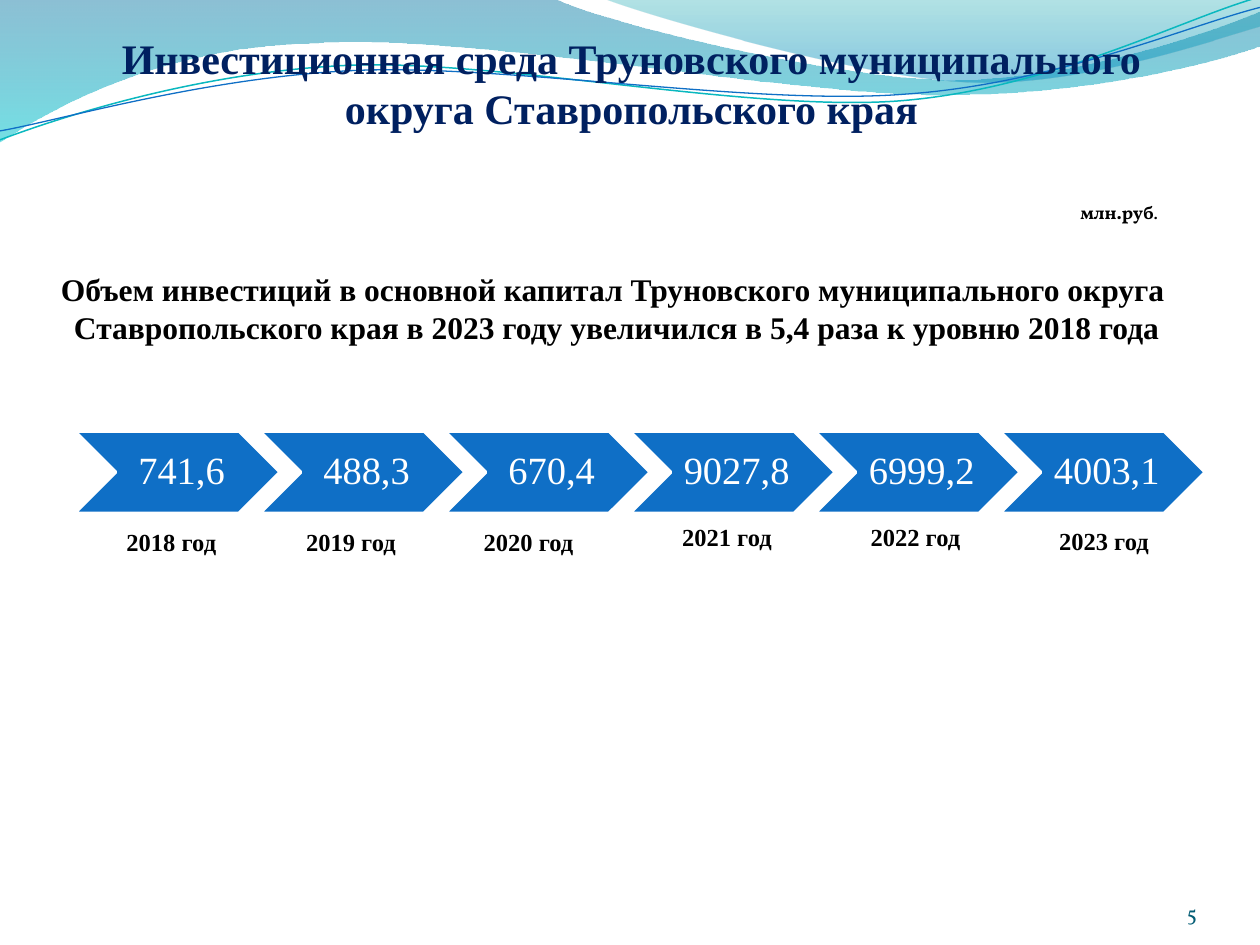
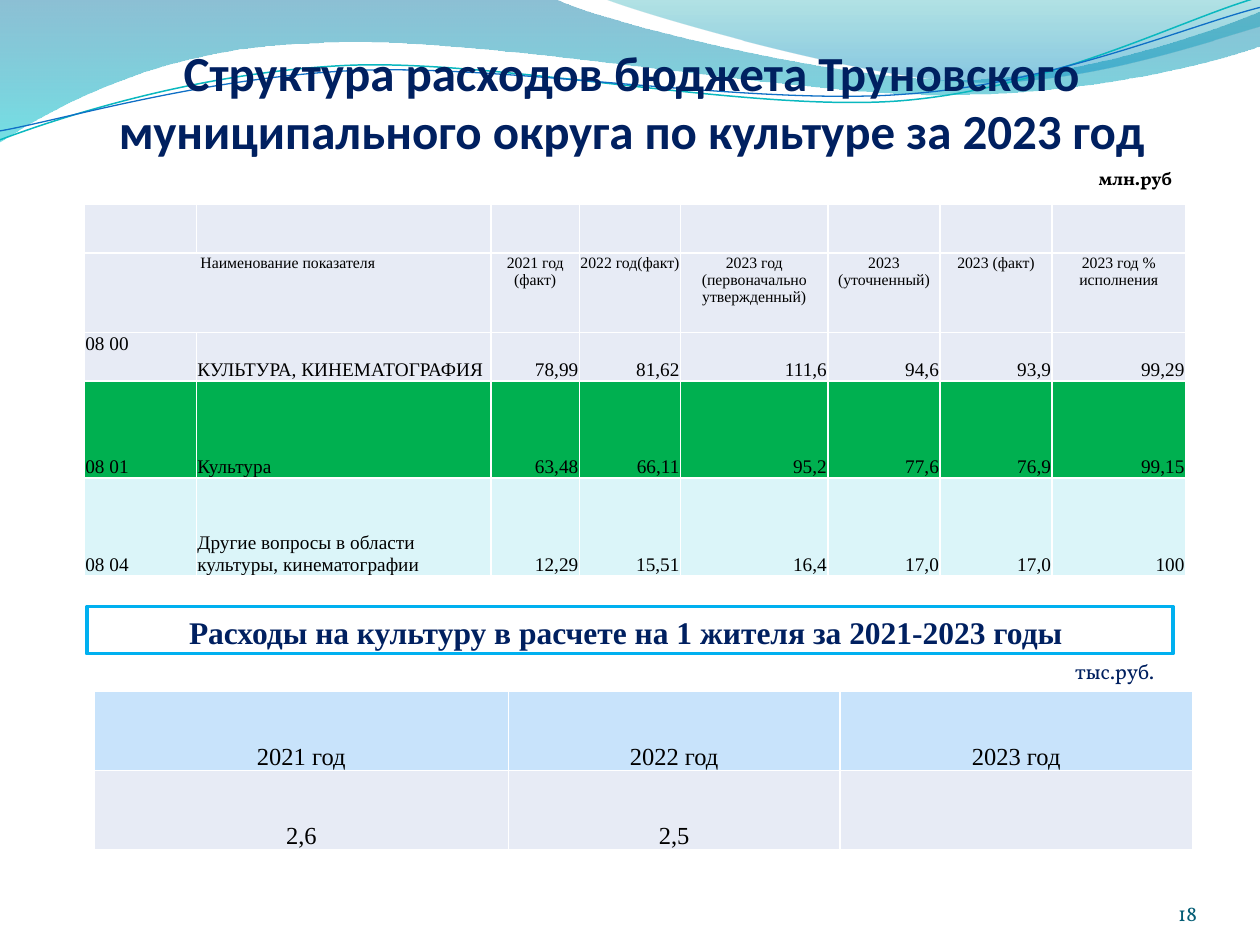
from lxml.etree import SubElement
from pptx import Presentation
from pptx.dml.color import RGBColor
from pptx.enum.shapes import MSO_SHAPE
from pptx.enum.text import MSO_ANCHOR, PP_ALIGN
from pptx.oxml.ns import qn
from pptx.util import Cm, Pt

WHITE = RGBColor(0xFF, 0xFF, 0xFF)
BLACK = RGBColor(0, 0, 0)
NAVY = RGBColor(0x00, 0x20, 0x60)
BLUE = RGBColor(0x0F, 0x6F, 0xC6)
SKY = RGBColor(0x00, 0xB0, 0xF0)
TEAL_LINE = RGBColor(0x0A, 0xB8, 0xBF)
PAGE_TEAL = RGBColor(0x04, 0x5D, 0x75)
GREY = RGBColor(0xE7, 0xEB, 0xF5)
GREEN = RGBColor(0x00, 0xB0, 0x50)
PALE_TEAL = RGBColor(0xDB, 0xF5, 0xF9)
PALE_BLUE = RGBColor(0xC8, 0xE3, 0xFB)

SERIF, SANS, VOLLKORN = "Times New Roman", "Calibri", "Vollkorn"
LEFT, CENTER, RIGHT = PP_ALIGN.LEFT, PP_ALIGN.CENTER, PP_ALIGN.RIGHT
INSETS = (0.25, 0.13, 0.25, 0.13)
CELL_INSETS = (0.02, 0.02, 0.02, 0)

# Wave outlines in cm: a pair is a corner, six numbers are a Bézier curve
BIG_WAVE = [(0, 0), (11.18, -0.03), (12.09, 0.43, 16.87, 1.6, 19.25, 1.6),
            (21.67, 1.6, 24.33, 0.66, 25.4, 0.23), (25.43, 0.91),
            (24.97, 1.12, 22.1, 1.93, 18.95, 1.91),
            (15.8, 1.91, 9.7, 0.71, 6.53, 0.86),
            (3.28, 0.91, 1.17, 2.11, -0.03, 2.87)]
RIGHT_WAVE = [(12.17, -0.03), (12.93, 0.28, 17.32, 1.57, 19.53, 1.65),
              (21.74, 1.75, 24.41, 0.81, 25.4, 0.53), (25.4, 0)]
# The two thin curves are given before their rotation
CURVE_ROTATION = 357.3
TEAL_CURVE = [(-0.05, 2.22), (1.19, 1.82, 4.02, 1.04, 7.05, 1.05),
              (10.05, 1.07, 15.02, 2.37, 18.08, 2.29),
              (21.13, 2.2, 23.86, 0.91, 25.41, 0.55)]
BLUE_CURVE = [(-0.04, 2.04), (1.16, 1.89, 4.17, 1.15, 7.2, 1.16),
              (10.25, 1.18, 15.13, 2.25, 18.19, 2.16),
              (21.22, 2.1, 23.93, 1.06, 25.45, 0.75)]
# Gradient stops: position, colour, opacity in percent
BIG_STOPS = [(0, RGBColor(0x00, 0x74, 0xA1), 45), (1, RGBColor(0x00, 0xC6, 0xCF), 55)]
RIGHT_STOPS = [(0, RGBColor(0x00, 0xA1, 0xA9), 30), (0.8, RGBColor(0x00, 0x8B, 0xBF), 45)]


def box(x, y, w, h):
    return Cm(x), Cm(y), Cm(w), Cm(h)


def fill_text(tf, lines, size, color, font=SERIF, bold=False, align=CENTER,
              anchor=MSO_ANCHOR.TOP, insets=INSETS, wrap=True):
    tf.word_wrap = wrap
    tf.vertical_anchor = anchor
    tf.margin_left, tf.margin_top, tf.margin_right, tf.margin_bottom = map(Cm, insets)
    for i, line in enumerate(lines):
        p = tf.add_paragraph() if i else tf.paragraphs[0]
        p.add_run().text = line
        style(p, size, color, font, bold, align)


def style(p, size, color, font=SERIF, bold=False, align=CENTER):
    p.alignment = align
    p.font.size, p.font.name, p.font.bold = Pt(size), font, bold
    p.font.color.rgb = color


def add_text(s, place, lines, size, color, **options):
    tf = s.shapes.add_textbox(*box(*place)).text_frame
    fill_text(tf, lines, size, color, **options)
    return tf


def add_outline(s, outline, close):
    points = [(Cm(x), Cm(y)) for part in outline for x, y in zip(part[::2], part[1::2])]
    builder = s.shapes.build_freeform(*points[0])
    builder.add_line_segments(points[1:], close=close)
    sp = builder.convert_to_shape()
    sp.shadow.inherit = False
    # Join each three segments of a curve into one Bézier segment
    segments = iter(list(sp._element.spPr.iter(qn("a:lnTo"))))
    for part in outline[1:]:
        first, *others = [next(segments) for _ in part[::2]]
        if others:
            first.tag = qn("a:cubicBezTo")
            for segment in others:
                first.append(segment[0])
                segment.getparent().remove(segment)
    return sp


def add_waves(s):
    for outline, stops in ((BIG_WAVE, BIG_STOPS), (RIGHT_WAVE, RIGHT_STOPS)):
        sp = add_outline(s, outline, True)
        sp.line.fill.background()
        sp.fill.gradient()
        sp.fill.gradient_angle = 270
        for stop, (position, color, _) in zip(sp.fill.gradient_stops, stops):
            stop.position = position
            stop.color.rgb = color
        colors = sp._element.spPr.iter(qn("a:srgbClr"))
        for node, (_, _, opacity) in zip(list(colors), stops):
            SubElement(node, qn("a:alpha"), val=str(opacity * 1000))
    for outline, color, width in ((TEAL_CURVE, TEAL_LINE, 0.85), (BLUE_CURVE, BLUE, 0.75)):
        sp = add_outline(s, outline, False)
        sp.rotation = CURVE_ROTATION
        sp.fill.background()
        sp.line.color.rgb = color
        sp.line.width = Pt(width)


def add_base(prs, title, top, size, font, page):
    """Blank slide with the waves, the title and the page number."""
    s = prs.slides.add_slide(prs.slide_layouts[6])
    add_waves(s)
    add_text(s, (1.3, top, 22.86, 3.18), [title], size, NAVY, font=font, bold=True,
             insets=(0, 0.13, 0, 0))
    add_text(s, (22.02, 17.65, 2.11, 1.02), [page], 12, PAGE_TEAL, font=VOLLKORN,
             align=RIGHT, anchor=MSO_ANCHOR.BOTTOM, insets=(0, 0, 0, 0))
    return s


def add_chevrons(s, left, top, values):
    width, height, step = 4.15, 1.66, 3.73
    for i, value in enumerate(values):
        sp = s.shapes.add_shape(MSO_SHAPE.CHEVRON, *box(left + i * step, top, width, height))
        sp.shadow.inherit = False
        sp.fill.solid()
        sp.fill.fore_color.rgb = BLUE
        sp.line.color.rgb = WHITE
        sp.line.width = Pt(2)
        fill_text(sp.text_frame, [value], 22, WHITE, anchor=MSO_ANCHOR.MIDDLE,
                  insets=(0.25, 0.08, 0.08, 0.08), wrap=False)
        sp.text_frame.paragraphs[0].line_spacing = 0.9


def style_cell(cell, color):
    tcPr = cell._tc.get_or_add_tcPr()
    for side in ("a:lnL", "a:lnR", "a:lnT", "a:lnB"):
        ln = SubElement(tcPr, qn(side), w=str(Pt(1)))
        SubElement(SubElement(ln, qn("a:solidFill")), qn("a:srgbClr"), val=str(WHITE))
    cell.fill.solid()
    cell.fill.fore_color.rgb = color
    (cell.margin_left, cell.margin_top,
     cell.margin_right, cell.margin_bottom) = map(Cm, CELL_INSETS)


def add_grid(s, left, top, widths, heights, rows, fills, cell_format):
    """Table whose cell_format(row, column) gives size, alignment and anchor."""
    table = s.shapes.add_table(len(rows), len(widths),
                               *box(left, top, sum(widths), sum(heights))).table
    table.first_row = table.horz_banding = False
    for column, width in zip(table.columns, widths):
        column.width = Cm(width)
    for i, (row, height) in enumerate(zip(rows, heights)):
        table.rows[i].height = Cm(height)
        for j, text in enumerate(row):
            cell = table.cell(i, j)
            style_cell(cell, fills[i])
            size, align, cell.vertical_anchor = cell_format(i, j)
            p = cell.text_frame.paragraphs[0]
            if text:
                p.add_run().text = text
            style(p, size, BLACK, align=align)
    return table


def culture_format(i, j):
    if i < 2:
        return 9, CENTER, MSO_ANCHOR.TOP
    anchor = MSO_ANCHOR.TOP if (i, j) == (2, 0) else MSO_ANCHOR.BOTTOM
    return 11, LEFT if j < 2 else RIGHT, anchor


def per_head_format(i, j):
    return 14, CENTER, MSO_ANCHOR.BOTTOM


def build_investment(prs):
    s = add_base(prs, "Инвестиционная среда Труновского муниципального округа "
                 "Ставропольского края", 0.52, 24, SERIF, "5")
    add_chevrons(s, 1.5, 8.69, ["741,6", "488,3", "670,4", "9027,8", "6999,2", "4003,1"])
    # Years under the chevrons
    places = [(2.3, 10.5), (5.92, 10.5), (9.5, 10.5),
              (13.5, 10.39), (17.3, 10.39), (21.1, 10.48)]
    for year, (x, y) in enumerate(places, 2018):
        add_text(s, (x, y, 2.39, 0.86), [f"{year} год"], 14, BLACK, bold=True,
                 align=LEFT, wrap=False)
    # Summary and unit
    add_text(s, (0.33, 5.32, 24.21, 1.8),
             ["Объем инвестиций в основной капитал Труновского муниципального округа ",
              "Ставропольского края в 2023 году увеличился в 5,4 раза к уровню 2018 года"],
             18, BLACK, bold=True)
    tf = add_text(s, (21.53, 3.92, 2.08, 0.71), ["млн.руб"], 10.5, BLACK,
                  font=VOLLKORN, bold=True, align=LEFT, wrap=False)
    r = tf.paragraphs[0].add_run()
    r.text = "."
    r.font.bold = False


def build_culture(prs):
    s = add_base(prs, "Структура расходов бюджета Труновского муниципального округа "
                 "по культуре за 2023 год", 0.72, 28, SANS, "18")
    # Spending by budget section
    rows = [
        [""] * 8,
        ["Наименование показателя", "", "2021 год (факт)", "2022 год(факт)",
         "2023 год (первоначально утвержденный)", "2023 (уточненный)", "2023 (факт)",
         "2023 год % исполнения"],
        ["08 00", "КУЛЬТУРА, КИНЕМАТОГРАФИЯ", "78,99", "81,62", "111,6", "94,6", "93,9",
         "99,29"],
        ["08 01", "Культура", "63,48", "66,11", "95,2", "77,6", "76,9", "99,15"],
        ["08 04", "Другие вопросы в области культуры, кинематографии", "12,29", "15,51",
         "16,4", "17,0", "17,0", "100"],
    ]
    table = add_grid(s, 1.7, 4.12, [2.26, 5.94, 1.78, 2.04, 2.97, 2.26, 2.26, 2.69],
                     [0.98, 1.6, 0.98, 1.96, 1.96], rows,
                     [GREY, GREY, GREY, GREEN, PALE_TEAL], culture_format)
    table.cell(1, 0).merge(table.cell(1, 1))
    add_text(s, (21.9, 3.25, 1.98, 0.71), ["млн.руб"], 10.5, BLACK, font=VOLLKORN,
             bold=True, align=LEFT, wrap=False)
    # Framed heading
    sp = s.shapes.add_shape(MSO_SHAPE.RECTANGLE, *box(1.75, 12.23, 21.9, 0.95))
    sp.shadow.inherit = False
    sp.fill.background()
    sp.line.color.rgb = SKY
    sp.line.width = Pt(2)
    fill_text(sp.text_frame, ["Расходы на культуру в расчете на 1 жителя за 2021-2023 годы "],
              18, NAVY, bold=True)
    # Spending per resident
    add_grid(s, 1.9, 13.93, [8.35, 6.68, 7.11], [1.6, 1.6],
             [["2021 год", "2022 год", "2023 год"], ["2,6", "2,5", ""]],
             [PALE_BLUE, GREY], per_head_format)
    add_text(s, (20.3, 13.13, 4.34, 0.79), ["тыс.руб."], 12, NAVY, font=VOLLKORN,
             anchor=MSO_ANCHOR.MIDDLE)


def main():
    prs = Presentation()
    prs.slide_width, prs.slide_height = Cm(25.4), Cm(19.05)
    build_investment(prs)
    build_culture(prs)
    prs.save("out.pptx")


if __name__ == "__main__":
    main()
